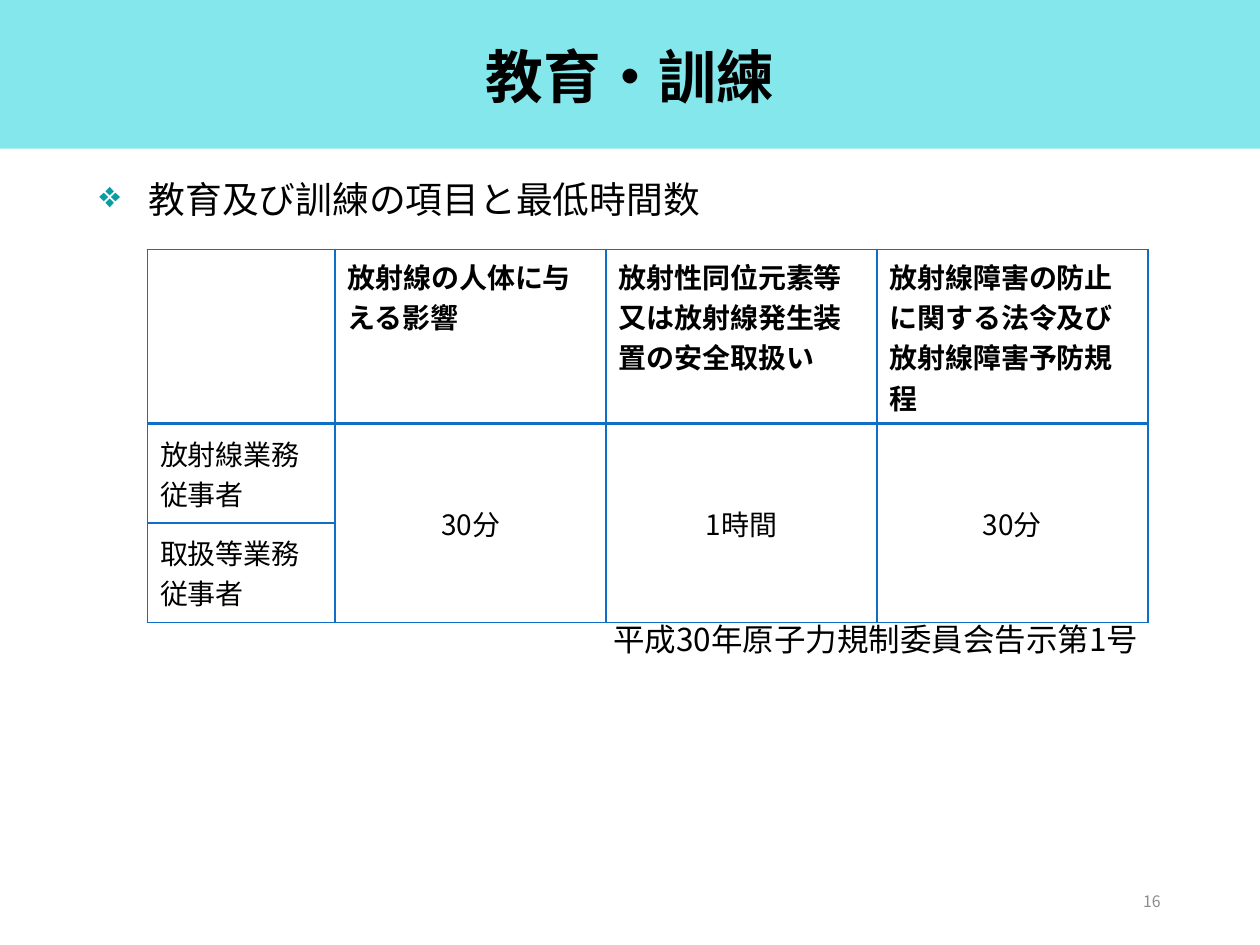
from dataclasses import dataclass

from lxml import etree
from pptx import Presentation
from pptx.dml.color import RGBColor
from pptx.enum.shapes import MSO_SHAPE
from pptx.enum.text import MSO_ANCHOR, PP_ALIGN
from pptx.oxml.ns import qn
from pptx.util import Inches, Pt

RECTANGLE = MSO_SHAPE.RECTANGLE
TOP, MIDDLE = MSO_ANCHOR.TOP, MSO_ANCHOR.MIDDLE
LEFT, CENTER, RIGHT = PP_ALIGN.LEFT, PP_ALIGN.CENTER, PP_ALIGN.RIGHT


@dataclass(frozen=True)
class Theme:
    font: str = "Noto Sans CJK JP"
    text: str = "000000"
    band: str = "0BD0D9"
    bullet: str = "089CA3"
    border: str = "0F6FC6"
    muted: str = "8C8C8C"
    title_size: float = 33
    body_size: float = 21
    note_size: float = 18
    table_size: float = 16
    number_size: float = 9


THEME = Theme()

HEADERS = [
    "",
    "放射線の人体に与える影響",
    "放射性同位元素等 又は放射線発生装 置の安全取扱い",
    "放射線障害の防止に関する法令及び放射線障害予防規程",
]
WORKERS = ["放射線業務従事者", "取扱等業務従事者"]
MINIMUM_TIMES = ["30分", "1時間", "30分"]
COLUMN_WIDTHS = [1.49, 2.15, 2.15, 2.15]
ROW_HEIGHTS = [1.38, 0.79, 0.79]


def write(frame, text, size, color=THEME.text, bold=False, align=LEFT, spacing=None):
    """Put one run into the first paragraph and return that paragraph."""
    para = frame.paragraphs[0]
    para.alignment = align
    if spacing:
        para.line_spacing = spacing
    span = para.add_run()
    span.text = text
    span.font.name = THEME.font
    span.font.size = Pt(size)
    span.font.bold = bold
    span.font.color.rgb = RGBColor.from_string(color)
    east_asian = etree.SubElement(span.font._element, qn("a:ea"))
    east_asian.set("typeface", THEME.font)
    return para


def add_text(page, left, top, width, height, text, size, anchor=TOP, **style):
    box = page.shapes.add_textbox(
        Inches(left), Inches(top), Inches(width), Inches(height))
    box.text_frame.word_wrap = True
    box.text_frame.vertical_anchor = anchor
    return write(box.text_frame, text, size, **style)


def add_band(page):
    band = page.shapes.add_shape(RECTANGLE, 0, 0, Inches(10), Inches(1.18))
    band.shadow.inherit = False
    band.line.fill.background()
    band.fill.solid()
    band.fill.fore_color.rgb = RGBColor.from_string(THEME.band)
    color = band._element.spPr.find(qn("a:solidFill"))[0]
    etree.SubElement(color, qn("a:alpha")).set("val", "50000")


def set_bullet(para, mark, indent):
    props = para._p.get_or_add_pPr()
    props.set("marL", str(Inches(indent)))
    props.set("indent", str(-Inches(indent)))
    color = etree.SubElement(props, qn("a:buClr"))
    etree.SubElement(color, qn("a:srgbClr")).set("val", THEME.bullet)
    etree.SubElement(props, qn("a:buChar")).set("char", mark)


def set_borders(cell, **widths):
    """Draw the sides L, R, T and B with the given widths in points."""
    props = cell._tc.get_or_add_tcPr()
    for position, side in enumerate("LRTB"):
        line = etree.Element(qn(f"a:ln{side}"), w=str(Pt(widths.get(side, 1))))
        fill = etree.SubElement(line, qn("a:solidFill"))
        etree.SubElement(fill, qn("a:srgbClr")).set("val", THEME.border)
        props.insert(position, line)


def add_hours_table(page):
    table = page.shapes.add_table(
        len(ROW_HEIGHTS), len(COLUMN_WIDTHS), Inches(1.17), Inches(1.98),
        Inches(sum(COLUMN_WIDTHS)), Inches(sum(ROW_HEIGHTS))).table
    for column, width in zip(table.columns, COLUMN_WIDTHS):
        column.width = Inches(width)
    for number, (row, height) in enumerate(zip(table.rows, ROW_HEIGHTS)):
        row.height = Inches(height)
        edges = [{"B": 2}, {"T": 2}, {}][number]
        for cell in row.cells:
            cell.fill.background()
            cell.vertical_anchor = MIDDLE if number else TOP
            set_borders(cell, **edges)

    size = THEME.table_size
    for column, header in enumerate(HEADERS):
        if header:
            write(table.cell(0, column).text_frame, header, size, bold=True)
    for row, worker in enumerate(WORKERS, start=1):
        write(table.cell(row, 0).text_frame, worker, size)
    for column, time in enumerate(MINIMUM_TIMES, start=1):
        cell = table.cell(1, column)
        cell.merge(table.cell(2, column))
        write(cell.text_frame, time, size, align=CENTER)


def main():
    deck = Presentation()
    deck.slide_width, deck.slide_height = Inches(10), Inches(7.5)
    page = deck.slides.add_slide(deck.slide_layouts[6])
    add_band(page)
    add_text(page, 0.69, 0.21, 8.62, 0.85, "教育・訓練", THEME.title_size,
             anchor=MIDDLE, bold=True, align=CENTER, spacing=0.9)
    heading = add_text(page, 0.69, 1.39, 8.62, 5.36,
                       "教育及び訓練の項目と最低時間数", THEME.body_size, spacing=0.9)
    heading.space_before = Pt(7.5)
    set_bullet(heading, "❖", 0.39)
    add_hours_table(page)
    add_text(page, 4.77, 4.92, 4.41, 0.4, "平成30年原子力規制委員会告示第1号",
             THEME.note_size, spacing=0.83)
    add_text(page, 7.06, 6.95, 2.25, 0.4, "16", THEME.number_size,
             anchor=MIDDLE, color=THEME.muted, align=RIGHT)
    deck.save("out.pptx")


if __name__ == "__main__":
    main()
